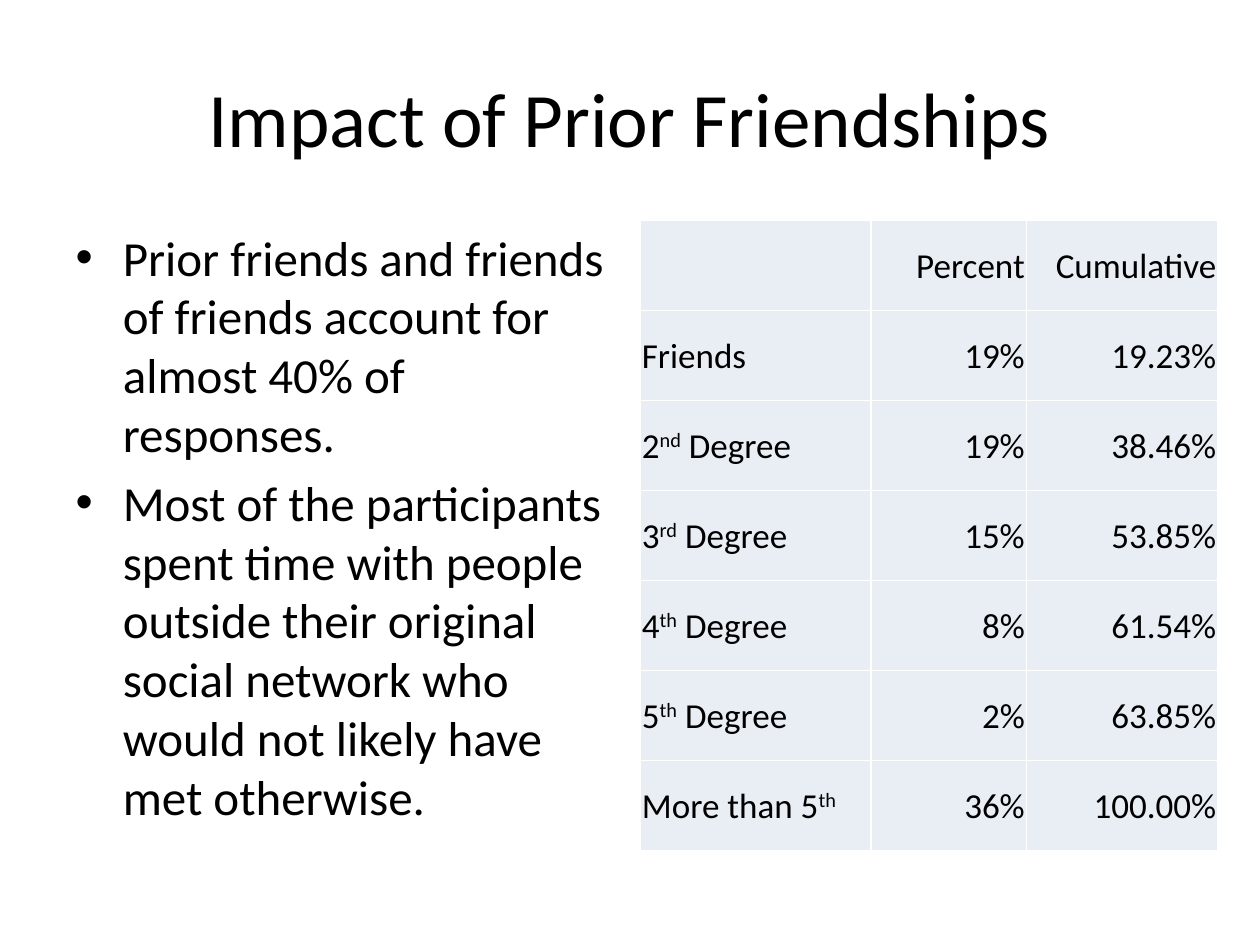
from lxml import etree
from pptx import Presentation
from pptx.dml.color import RGBColor
from pptx.enum.text import MSO_ANCHOR, MSO_AUTO_SIZE, PP_ALIGN
from pptx.oxml.ns import qn
from pptx.util import Cm, Pt

LEFT, CENTER, RIGHT = PP_ALIGN.LEFT, PP_ALIGN.CENTER, PP_ALIGN.RIGHT
MIDDLE = MSO_ANCHOR.MIDDLE
NO_AUTOFIT = MSO_AUTO_SIZE.NONE

FONT = "Calibri"
BLACK, WHITE, PALE_BLUE = "000000", "FFFFFF", "E9EDF4"

POINTS = [
    "Prior friends and friends of friends account for almost 40% of responses.",
    "Most of the participants spent time with people outside their original "
    "social network who would not likely have met otherwise.",
]
# Each label is split into plain text, superscript and plain text.
ROWS = [
    ([], "Percent", "Cumulative"),
    (["Friends"], "19%", "19.23%"),
    (["2", "nd", " Degree"], "19%", "38.46%"),
    (["3", "rd", " Degree"], "15%", "53.85%"),
    (["4", "th", " Degree"], "8%", "61.54%"),
    (["5", "th", " Degree"], "2%", "63.85%"),
    (["More than 5", "th"], "36%", "100.00%"),
]
COLUMN_WIDTHS = [4.65, 3.13, 3.86]
TABLE_HEIGHT = 12.7


def color(value):
    return RGBColor.from_string(value)


def write(para, text, size, align=None, superscript=False):
    """Append one formatted span of text to a paragraph."""
    if align is not None:
        para.alignment = align
    span = para.add_run()
    span.text = text
    span.font.name = FONT
    span.font.size = Pt(size)
    span.font.color.rgb = color(BLACK)
    if superscript:
        span._r.get_or_add_rPr().set("baseline", "30000")


def place(box, left, top, width, height):
    box.left, box.top = Cm(left), Cm(top)
    box.width, box.height = Cm(width), Cm(height)


def add_title(page, text):
    box = page.shapes.title
    place(box, 1.27, 0.76, 22.86, 3.18)
    box.text_frame.auto_size = NO_AUTOFIT
    box.text_frame.vertical_anchor = MIDDLE
    write(box.text_frame.paragraphs[0], text, 44, align=CENTER)


def add_bullets(page, points):
    box = page.placeholders[1]
    place(box, 1.27, 4.45, 11.23, 12.57)
    frame = box.text_frame
    frame.auto_size = NO_AUTOFIT
    for index, point in enumerate(points):
        para = frame.add_paragraph() if index else frame.paragraphs[0]
        write(para, point, 28)


def add_borders(cell, line_color, width):
    properties = cell._tc.get_or_add_tcPr()
    for side in ("lnL", "lnR", "lnT", "lnB"):
        line = etree.SubElement(properties, qn(f"a:{side}"), w=str(Pt(width)))
        fill = etree.SubElement(line, qn("a:solidFill"))
        etree.SubElement(fill, qn("a:srgbClr"), val=line_color)


def fill_cell(cell, parts, align):
    """Style a cell and write its parts, every second one as superscript."""
    add_borders(cell, WHITE, 1)
    cell.fill.solid()
    cell.fill.fore_color.rgb = color(PALE_BLUE)
    cell.vertical_anchor = MIDDLE
    cell.margin_left = cell.margin_right = cell.margin_top = Cm(0.03)
    cell.margin_bottom = 0
    para = cell.text_frame.paragraphs[0]
    for index, part in enumerate(parts):
        write(para, part, 20, align=align, superscript=index % 2 == 1)


def add_degree_table(page):
    frame = page.shapes.add_table(
        len(ROWS), len(COLUMN_WIDTHS), Cm(12.91), Cm(4.45),
        Cm(sum(COLUMN_WIDTHS)), Cm(TABLE_HEIGHT))
    table = frame.table
    table.first_row = table.horz_banding = False
    for column, width in zip(table.columns, COLUMN_WIDTHS):
        column.width = Cm(width)
    for index, (label, percent, cumulative) in enumerate(ROWS):
        table.rows[index].height = Cm(TABLE_HEIGHT / len(ROWS))
        fill_cell(table.cell(index, 0), label, LEFT)
        fill_cell(table.cell(index, 1), [percent], RIGHT)
        fill_cell(table.cell(index, 2), [cumulative], RIGHT)


def main():
    deck = Presentation()
    deck.slide_width, deck.slide_height = Cm(25.4), Cm(19.05)
    page = deck.slides.add_slide(deck.slide_layouts[1])
    add_title(page, "Impact of Prior Friendships")
    add_bullets(page, POINTS)
    add_degree_table(page)
    deck.save("out.pptx")


if __name__ == "__main__":
    main()
